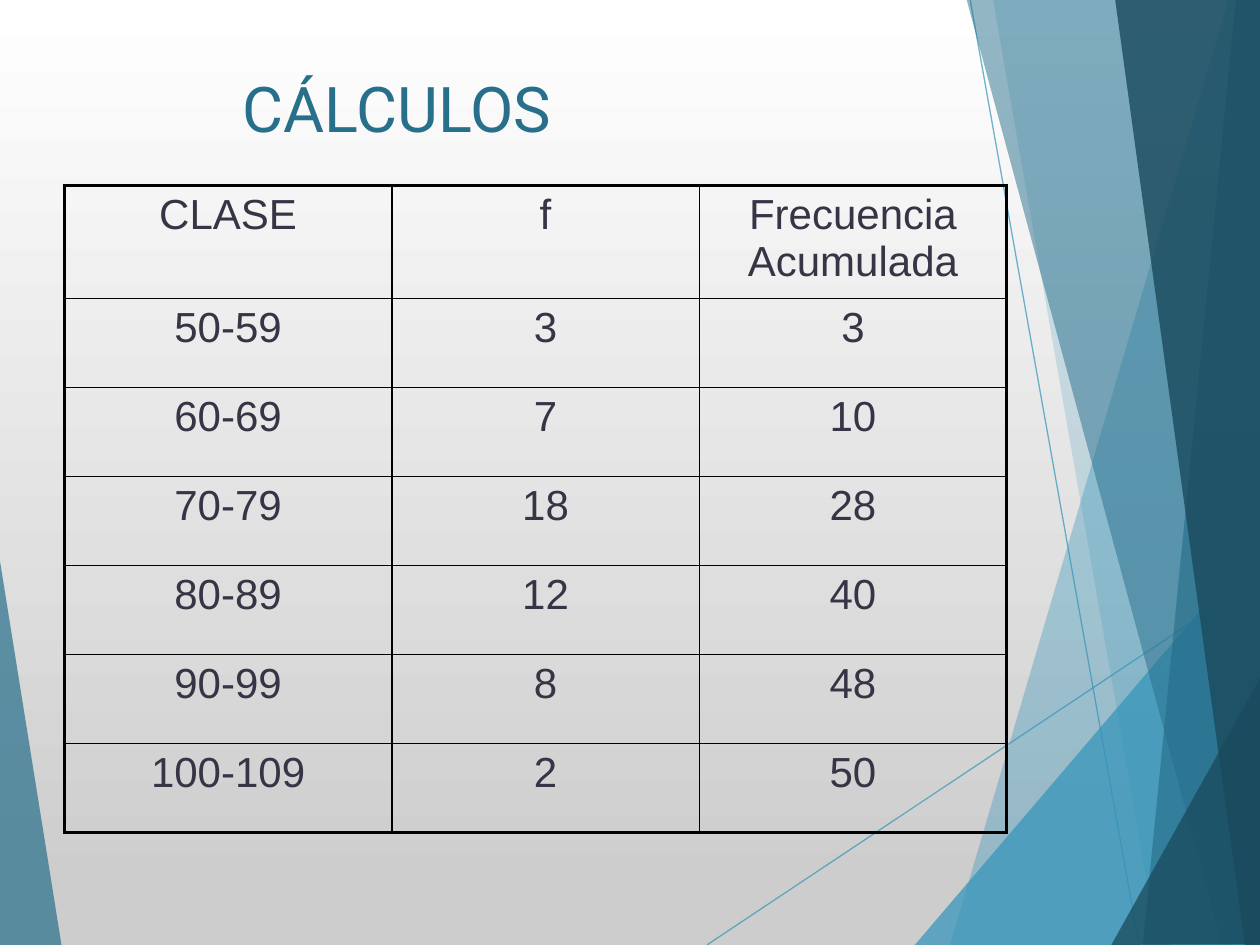
import collections
import dataclasses

import pptx
import pptx.dml.color
import pptx.enum.shapes
import pptx.enum.text
import pptx.oxml
import pptx.oxml.ns
import pptx.util

Inches = pptx.util.Inches
Pt = pptx.util.Pt
Box = collections.namedtuple("Box", "left top width height")


@dataclasses.dataclass(frozen=True)
class Theme:
    sky: str = "3494BA"
    teal: str = "276F8B"
    navy: str = "1A4A5D"
    ink: str = "373545"
    border: str = "000000"
    backdrop: tuple = ((0, "FFFFFF"), (0.94, "CDCDCD"))
    title_font: str = "Roboto"
    body_font: str = "Arial"
    title_size: int = 36
    body_size: int = 24
    ray_width: float = 0.75
    frame_width: float = 2.25
    rule_width: float = 1


THEME = Theme()

RAYS = (((5.61, 7.5), (10.01, 4.57)), ((7.7, 0), (9.04, 7.5)))

FACETS = (
    (THEME.sky, 36, ((9.75, 0), (7.54, 7.5), (10.02, 7.51), (10.01, 0.01))),
    (THEME.sky, 20, ((7.88, -0.01), (9.19, 7.5), (10.01, 7.5), (10.01, -0.01))),
    (THEME.sky, 72, ((7.26, 7.5), (10, 4.29), (10.01, 7.5))),
    (THEME.teal, 50, ((7.67, -0.01), (9.7, 7.5), (10.01, 7.49), (10.01, -0.01))),
    (THEME.teal, 66, ((9.81, -0.01), (9.07, 7.5), (10.01, 7.5), (10, -0.01))),
    (THEME.navy, 80, ((8.85, -0.01), (9.88, 7.5), (10.02, 7.5), (10, -0.01))),
    (THEME.navy, 76, ((8.82, 7.5), (10.02, 5.35), (10.02, 7.49))),
    (THEME.teal, 70, ((-0.01, 4.39), (0.49, 7.51), (-0.01, 7.5))),
)

FREQUENCIES = (
    ("CLASE", "f", "Frecuencia Acumulada"),
    ("50-59", "3", "3"),
    ("60-69", "7", "10"),
    ("70-79", "18", "28"),
    ("80-89", "12", "40"),
    ("90-99", "8", "48"),
    ("100-109", "2", "50"),
)


def rgb(color):
    return pptx.dml.color.RGBColor.from_string(color)


def apply_format(target, values):
    for name, value in values.items():
        setattr(target, name, value)


def add_element(parent, tag, **attributes):
    element = pptx.oxml.parse_xml(f"<a:{tag} {pptx.oxml.ns.nsdecls('a')}/>")
    for name, value in attributes.items():
        element.set(name, str(value))
    parent.append(element)
    return element


def set_opacity(shape, percent):
    for color in shape.element.spPr.findall(".//" + pptx.oxml.ns.qn("a:srgbClr")):
        add_element(color, "alpha", val=percent * 1000)


def write_text(frame, text, font, paragraph=None):
    frame.text = text
    apply_format(frame.paragraphs[0], paragraph or {})
    run_font = frame.paragraphs[0].runs[0].font
    apply_format(run_font, {key: font[key] for key in ("name", "size")})
    run_font.color.rgb = rgb(font["color"])


def paint_backdrop(slide):
    fill = slide.background.fill
    fill.gradient()
    fill.gradient_angle = 270
    for stop, (position, color) in zip(fill.gradient_stops, THEME.backdrop):
        stop.position = position
        stop.color.rgb = rgb(color)


def draw_facets(slide, box):
    def place(point):
        return box.left + Inches(point[0]), box.top + Inches(point[1])

    for start, end in RAYS:
        ray = slide.shapes.add_connector(
            pptx.enum.shapes.MSO_CONNECTOR.STRAIGHT, *place(start), *place(end))
        ray.line.width = Pt(THEME.ray_width)
        ray.line.color.rgb = rgb(THEME.sky)
        set_opacity(ray, 70)
        add_element(ray.element.spPr, "effectLst")

    for color, opacity, corners in FACETS:
        first, *others = map(place, corners)
        outline = slide.shapes.build_freeform(*first)
        outline.add_line_segments(others, close=True)
        facet = outline.convert_to_shape()
        facet.fill.solid()
        facet.fill.fore_color.rgb = rgb(color)
        set_opacity(facet, opacity)
        facet.line.fill.background()
        facet.shadow.inherit = False


def write_title(slide, box):
    frame = slide.shapes.add_textbox(*box).text_frame
    apply_format(frame, {
        "word_wrap": True,
        "vertical_anchor": pptx.enum.text.MSO_ANCHOR.TOP,
    })
    write_text(frame, "CÁLCULOS", {
        "name": THEME.title_font,
        "size": Pt(THEME.title_size),
        "color": THEME.teal,
    })


def border_cell(cell, widths):
    properties = cell._tc.get_or_add_tcPr()
    for side, width in widths.items():
        line = add_element(properties, "ln" + side, w=Pt(width))
        add_element(add_element(line, "solidFill"), "srgbClr", val=THEME.border)


def fill_table(slide, box):
    row_count, column_count = len(FREQUENCIES), len(FREQUENCIES[0])
    table = slide.shapes.add_table(row_count, column_count, *box).table
    apply_format(table, {"first_row": False, "horz_banding": False})

    class_width, header_height = Inches(2.6), Inches(0.9)
    other_width = (box.width - class_width) // (column_count - 1)
    other_height = (box.height - header_height) // (row_count - 1)
    for index, column in enumerate(table.columns):
        column.width = other_width if index else class_width
    for index, row in enumerate(table.rows):
        row.height = other_height if index else header_height

    font = {
        "name": THEME.body_font,
        "size": Pt(THEME.body_size),
        "color": THEME.ink,
    }
    paragraph = {
        "alignment": pptx.enum.text.PP_ALIGN.CENTER,
        "space_before": Pt(THEME.body_size * 0.2),
    }
    for row, entries in enumerate(FREQUENCIES):
        for column, entry in enumerate(entries):
            cell = table.cell(row, column)
            outer = {
                "L": column == 0,
                "R": column == column_count - 1,
                "T": row == 0,
                "B": row == row_count - 1,
            }
            border_cell(cell, {
                side: THEME.frame_width if edge else THEME.rule_width
                for side, edge in outer.items()
            })
            cell.fill.background()
            write_text(cell.text_frame, entry, font, paragraph)


def main():
    deck = pptx.Presentation()
    apply_format(deck, {"slide_width": Inches(10), "slide_height": Inches(7.5)})
    slide = deck.slides.add_slide(deck.slide_layouts[6])
    paint_backdrop(slide)
    draw_facets(slide, Box(0, 0, deck.slide_width, deck.slide_height))
    write_title(slide, Box(Inches(1.83), Inches(0.5), Inches(7.67), Inches(1.42)))
    fill_table(slide, Box(Inches(0.51), Inches(1.47), Inches(7.48), Inches(5.14)))
    deck.save("out.pptx")


if __name__ == "__main__":
    main()
